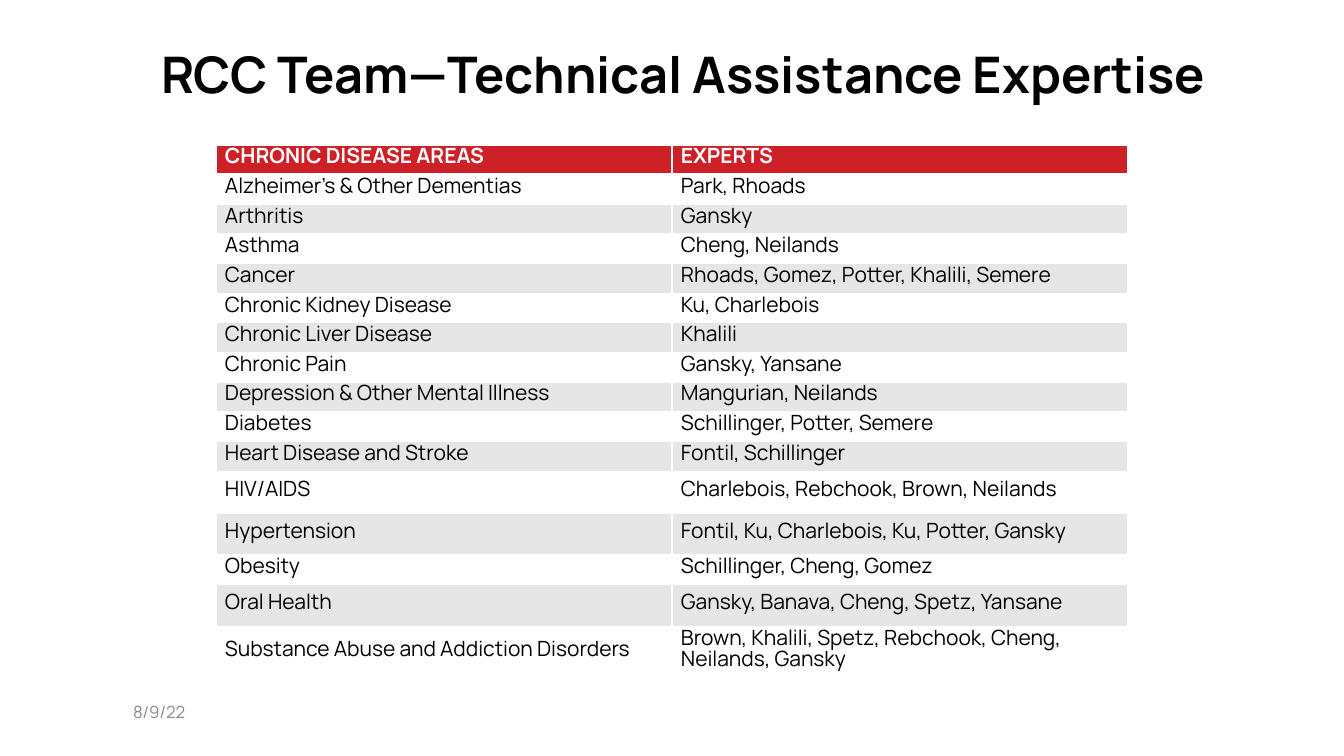
"""Build the slide on the technical assistance expertise of the RCC team."""
from lxml import etree
from pptx import Presentation
from pptx.dml.color import RGBColor
from pptx.enum.text import MSO_ANCHOR, MSO_AUTO_SIZE, PP_ALIGN
from pptx.oxml.ns import qn
from pptx.util import Pt

MIDDLE = MSO_ANCHOR.MIDDLE
NO_AUTOFIT = MSO_AUTO_SIZE.NONE
LEFT, CENTER = PP_ALIGN.LEFT, PP_ALIGN.CENTER

TITLE = "RCC Team—Technical Assistance Expertise"
DATE = "8/9/22"
HEADER = ("CHRONIC DISEASE AREAS", "EXPERTS")
EXPERTS = [
    ("Alzheimer’s & Other Dementias", "Park, Rhoads"),
    ("Arthritis", "Gansky"),
    ("Asthma", "Cheng, Neilands"),
    ("Cancer", "Rhoads, Gomez, Potter, Khalili, Semere"),
    ("Chronic Kidney Disease", "Ku, Charlebois"),
    ("Chronic Liver Disease", "Khalili"),
    ("Chronic Pain", "Gansky, Yansane"),
    ("Depression & Other Mental Illness", "Mangurian, Neilands"),
    ("Diabetes", "Schillinger, Potter, Semere"),
    ("Heart Disease and Stroke", "Fontil, Schillinger"),
    ("HIV/AIDS", "Charlebois, Rebchook, Brown, Neilands"),
    ("Hypertension", "Fontil, Ku, Charlebois, Ku, Potter, Gansky"),
    ("Obesity", "Schillinger, Cheng, Gomez"),
    ("Oral Health", "Gansky, Banava, Cheng, Spetz, Yansane"),
    ("Substance Abuse and Addiction Disorders",
     "Brown, Khalili, Spetz, Rebchook, Cheng, Neilands, Gansky"),
]
TALL_ROWS = {11: 42, 12: 42, 14: 42, 15: 51}

FONT = "Manrope"
BLACK, WHITE, RED, BAND, GRAY = "000000", "FFFFFF", "CD2027", "E7E6E6", "8C8C8C"
EMU_PER_PX = 914400 / 100.8
SLIDE_SIZE = (1344, 756)
TITLE_BOX = (64, 37, 1239, 80)
DATE_BOX = (109, 688, 313, 47)
TABLE_BOX = (216, 145, 912, 533)
FRAME_INSETS = (24, 12)
CELL_INSETS = (9, 1)


def px(length):
    return round(length * EMU_PER_PX)


def color(value):
    return RGBColor.from_string(value)


def write(frame, text, size, fill=BLACK, bold=False, align=LEFT, spacing=None):
    frame.word_wrap = True
    paragraph = frame.paragraphs[0]
    paragraph.alignment = align
    paragraph.line_spacing = spacing
    run = paragraph.add_run()
    run.text = text
    run.font.name = FONT
    run.font.size = Pt(size)
    run.font.bold = bold
    run.font.color.rgb = color(fill)


def set_insets(target, insets):
    target.margin_left = target.margin_right = px(insets[0])
    target.margin_top = target.margin_bottom = px(insets[1])
    target.vertical_anchor = MIDDLE


def place(shape, box):
    shape.left, shape.top, shape.width, shape.height = map(px, box)
    shape.text_frame.auto_size = NO_AUTOFIT
    set_insets(shape.text_frame, FRAME_INSETS)


def add_borders(cell, top, bottom):
    properties = cell._tc.get_or_add_tcPr()
    for side, width in (("L", 1), ("R", 1), ("T", top), ("B", bottom)):
        line = etree.SubElement(properties, qn("a:ln" + side), w=str(Pt(width)))
        fill = etree.SubElement(line, qn("a:solidFill"))
        etree.SubElement(fill, qn("a:srgbClr"), val=WHITE)


def add_expert_table(slide):
    rows = [HEADER, *EXPERTS]
    shape = slide.shapes.add_table(len(rows), len(HEADER), *map(px, TABLE_BOX))
    table = shape.table
    plain_height = ((TABLE_BOX[3] - sum(TALL_ROWS.values()))
                    / (len(rows) - len(TALL_ROWS)))
    for row_index, texts in enumerate(rows):
        table.rows[row_index].height = px(TALL_ROWS.get(row_index, plain_height))
        is_header = row_index == 0
        background = RED if is_header else (WHITE if row_index % 2 else BAND)
        for column_index, text in enumerate(texts):
            cell = table.cell(row_index, column_index)
            set_insets(cell, CELL_INSETS)
            add_borders(cell, 3 if row_index == 1 else 1, 3 if is_header else 1)
            cell.fill.solid()
            cell.fill.fore_color.rgb = color(background)
            write(cell.text_frame, text, 15, fill=WHITE if is_header else BLACK,
                  bold=is_header, spacing=Pt(14.8))


def main():
    presentation = Presentation()
    presentation.slide_width, presentation.slide_height = map(px, SLIDE_SIZE)
    slide = presentation.slides.add_slide(presentation.slide_layouts[5])

    date = slide.shapes.add_textbox(*map(px, DATE_BOX))
    place(date, DATE_BOX)
    write(date.text_frame, DATE, 12, fill=GRAY)

    title = slide.shapes.title
    place(title, TITLE_BOX)
    write(title.text_frame, TITLE, 36, bold=True, align=CENTER, spacing=0.9)

    add_expert_table(slide)
    presentation.save("out.pptx")


if __name__ == "__main__":
    main()
